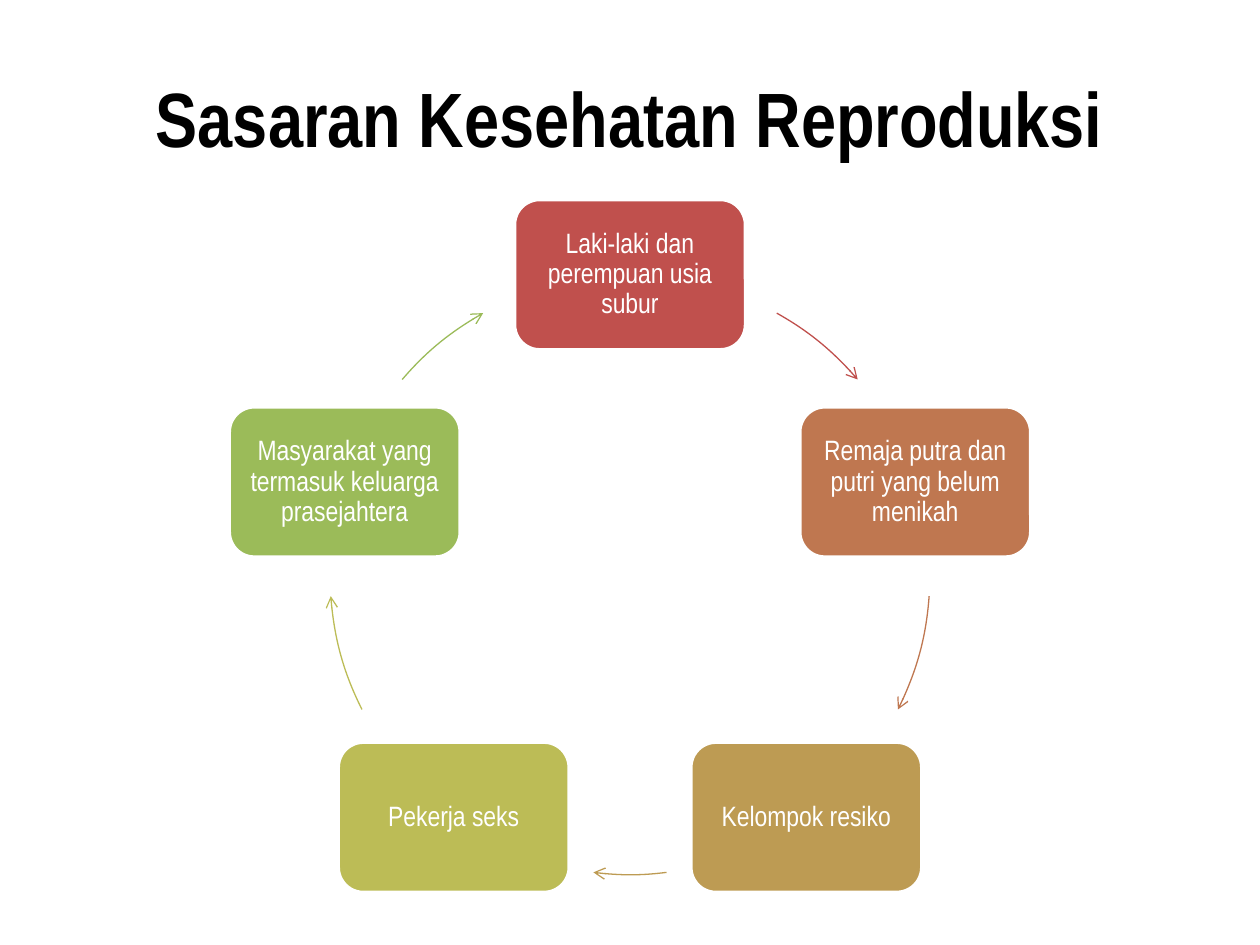
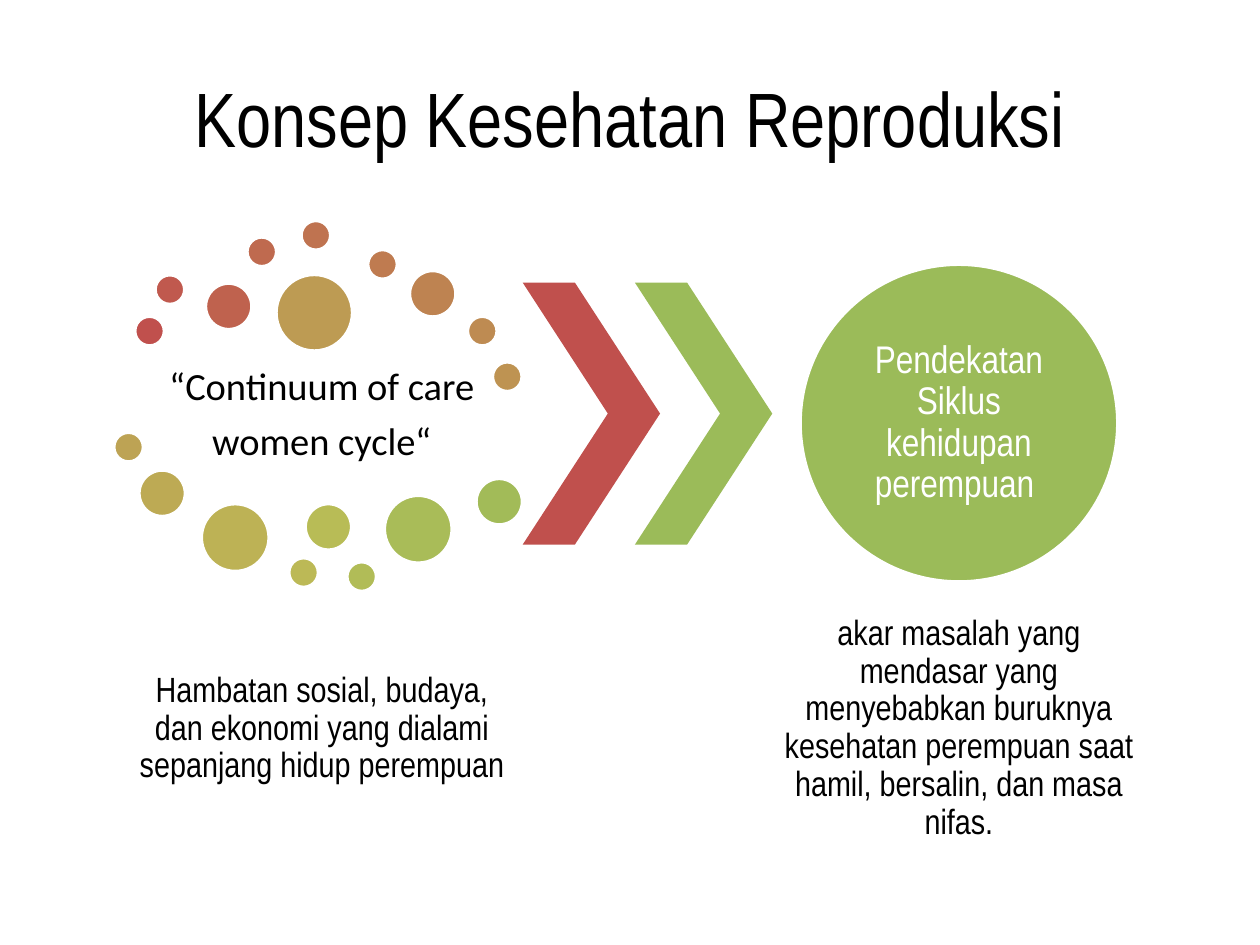
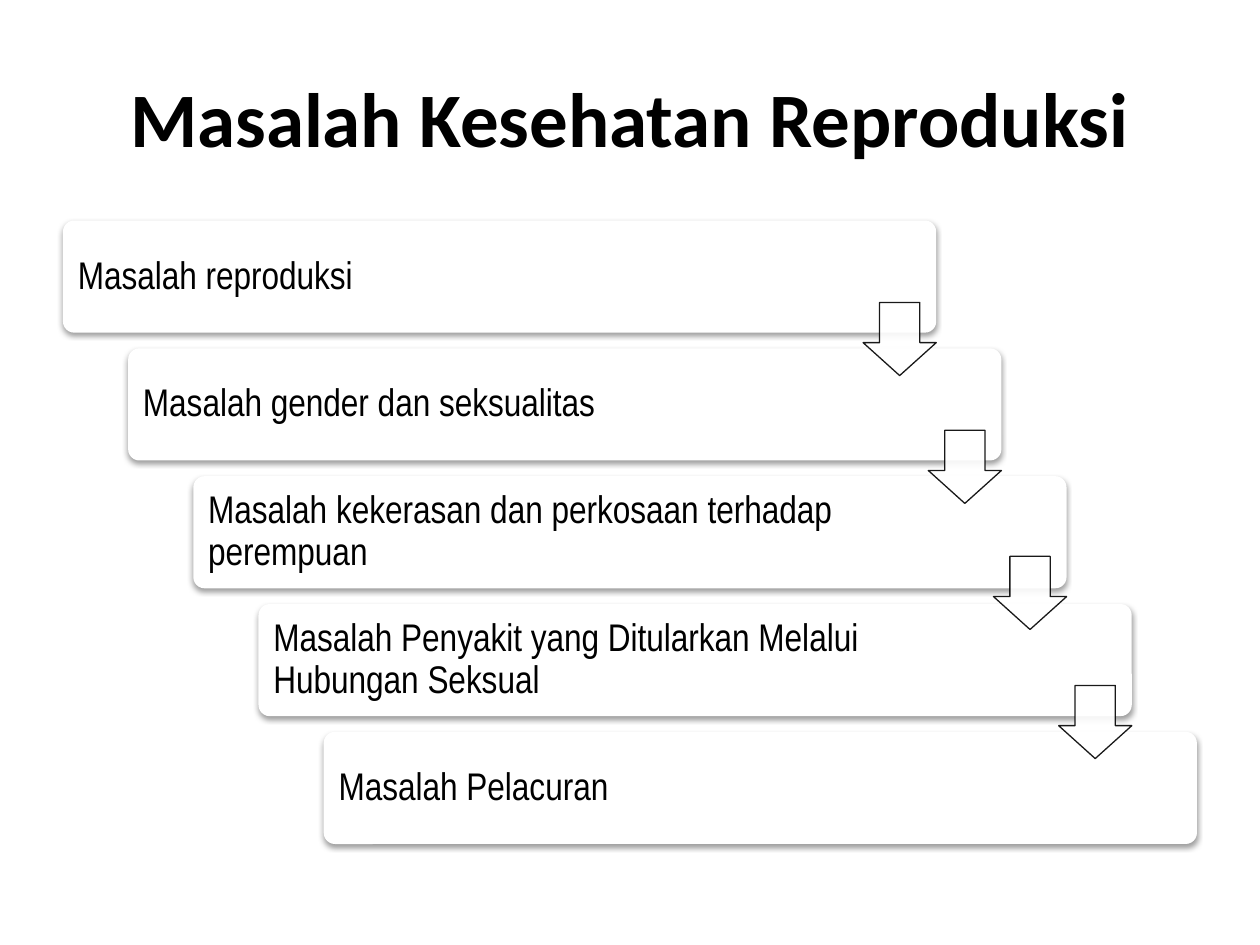
from colorsys import hls_to_rgb, rgb_to_hls
from math import cos, radians, sin, tan

from lxml.etree import SubElement
from pptx import Presentation
from pptx.dml.color import RGBColor
from pptx.enum.shapes import MSO_SHAPE as Shape
from pptx.enum.text import MSO_ANCHOR as Anchor, PP_ALIGN as Align
from pptx.oxml.ns import qn
from pptx.util import Pt

RED = RGBColor(0xC0, 0x50, 0x4D)
GREEN = RGBColor(0x9B, 0xBB, 0x59)
WHITE = RGBColor(0xFF, 0xFF, 0xFF)
BLACK = RGBColor(0x00, 0x00, 0x00)
NARROW = "Arial Narrow"
CALIBRI = "Calibri"

RING_LEFT, RING_TOP, RING_RADIUS = 188.6, 157, 171.4
TARGET_SIZE = (132, 85.9)
TARGETS = [
    "Laki-laki dan perempuan usia subur",
    "Remaja putra dan putri yang belum menikah",
    "Kelompok resiko",
    "Pekerja seks",
    "Masyarakat yang termasuk keluarga prasejahtera",
]
# Start and end angle of each arrow, clockwise from the right
ARROW_ANGLES = [(-60.7, -40.6), (4.1, 26.7), (83, 97), (153.3, 175.9), (220.6, 240.7)]

SMALL, MEDIUM, LARGE, LARGEST = 17, 26.6, 38.8, 43.8
# Left, top, diameter, in colour order
DOTS = [
    (77, 180.7, SMALL), (88.6, 157, SMALL), (117.4, 161.8, MEDIUM),
    (141.1, 135.4, SMALL), (172, 126, SMALL), (210.1, 142.6, SMALL),
    (234, 154.6, MEDIUM), (267.1, 180.7, SMALL), (281.4, 206.8, SMALL),
    (157.7, 156.8, LARGEST), (65, 247, SMALL), (79.4, 268.6, MEDIUM),
    (115, 287.8, LARGE), (165, 318.7, SMALL), (174.4, 287.8, MEDIUM),
    (198.2, 321, SMALL), (219.6, 283, LARGE), (272, 273.4, MEDIUM),
]

PROBLEMS = [
    "Masalah reproduksi",
    "Masalah gender dan seksualitas",
    "Masalah kekerasan dan perkosaan terhadap perempuan",
    "Masalah Penyakit yang Ditularkan Melalui Hubungan Seksual",
    "Masalah Pelacuran",
]
CARD_LEFT, CARD_TOP, CARD_WIDTH, CARD_HEIGHT = 36, 126, 499, 64.1
STEP_X, STEP_Y = 37.25, 73.05
ARROW_SIZE = 41.8
ARROW_DROPS = [46.8, 46.8, 45.8, 46.5]


def blend(share):
    """Colour between RED and GREEN, mixed along the hue."""
    start, end = (rgb_to_hls(*(part / 255 for part in color)) for color in (RED, GREEN))
    mixed = (a + (b - a) * share for a, b in zip(start, end))
    return RGBColor(*(round(part * 255) for part in hls_to_rgb(*mixed)))


def write(shape, lines, size, color=BLACK, font=NARROW, bold=False,
          align=Align.CENTER, spacing=0.9, insets=(0, 0, 0, 0)):
    """Fill a shape with paragraphs; insets are left, top, right, bottom."""
    frame = shape.text_frame
    frame.word_wrap = True
    frame.vertical_anchor = Anchor.MIDDLE
    frame.margin_left, frame.margin_top, frame.margin_right, frame.margin_bottom = map(Pt, insets)
    for index, line in enumerate(lines):
        paragraph = frame.add_paragraph() if index else frame.paragraphs[0]
        paragraph.alignment = align
        paragraph.line_spacing = spacing
        paragraph.space_after = Pt(size * 0.35)
        run = paragraph.add_run()
        run.text = line
        run.font.name = font
        run.font.size = Pt(size)
        run.font.bold = bold
        run.font.color.rgb = color


def add_text(slide, box, lines, size, **style):
    write(slide.shapes.add_textbox(*map(Pt, box)), lines, size, **style)


def add_title(slide, text, font=NARROW, bold=False):
    add_text(slide, (36, 21.6, 648, 90), [text], 44, font=font, bold=bold,
             spacing=1, insets=(7.2, 3.6, 7.2, 3.6))


def add_filled(slide, kind, box, fill, line=None, line_width=2, adjustments=()):
    shape = slide.shapes.add_shape(kind, *map(Pt, box))
    shape.shadow.inherit = False
    shape.fill.solid()
    shape.fill.fore_color.rgb = fill
    if line is None:
        shape.line.fill.background()
    else:
        shape.line.color.rgb = line
        shape.line.width = Pt(line_width)
    for index, value in enumerate(adjustments):
        shape.adjustments[index] = value
    return shape


def ring_point(angle, pull=0):
    """Point inside the ring's frame, moved along the tangent by pull radii."""
    turn = radians(angle)
    return (RING_RADIUS * (1 + cos(turn) - pull * sin(turn)),
            RING_RADIUS * (1 + sin(turn) + pull * cos(turn)))


def add_ring_arrow(slide, start, end, color):
    """Draw one Bezier arc in a frame as large as the whole ring."""
    pull = 4 / 3 * tan(radians(end - start) / 4)
    first, *curve = [ring_point(start), ring_point(start, pull),
                     ring_point(end, -pull), ring_point(end)]
    builder = slide.shapes.build_freeform(*map(Pt, first))
    builder.add_line_segments([tuple(map(Pt, curve[-1]))], close=False)
    arrow = builder.convert_to_shape()
    arrow.left, arrow.top = Pt(RING_LEFT), Pt(RING_TOP)
    arrow.width = arrow.height = Pt(2 * RING_RADIUS)

    outline = next(arrow._element.iter(qn("a:path")))
    for side in ("w", "h"):
        outline.set(side, str(arrow.width))
    for segment in list(outline):
        outline.remove(segment)
    for command, points in (("a:moveTo", [first]), ("a:cubicBezTo", curve)):
        segment = SubElement(outline, qn(command))
        for x, y in points:
            SubElement(segment, qn("a:pt"), x=str(Pt(x)), y=str(Pt(y)))

    arrow.shadow.inherit = False
    arrow.fill.background()
    arrow.line.color.rgb = color
    arrow.line.width = Pt(0.75)
    SubElement(arrow.line._get_or_add_ln(), qn("a:tailEnd"), type="arrow")


def add_soft_shadow(shape):
    effects = shape._element.spPr.find(qn("a:effectLst"))
    shadow = SubElement(effects, qn("a:outerShdw"), blurRad=str(Pt(3.1)), dist=str(Pt(1.6)),
                        dir="5400000", rotWithShape="0")
    color = SubElement(shadow, qn("a:srgbClr"), val=str(BLACK))
    SubElement(color, qn("a:alpha"), val="38000")


def set_opacity(shape, percent):
    for color in list(shape._element.spPr.iter(qn("a:srgbClr"))):
        SubElement(color, qn("a:alpha"), val=str(percent * 1000))


def build_targets(slide):
    add_title(slide, "Sasaran Kesehatan Reproduksi", bold=True)
    width, height = TARGET_SIZE
    for index, (text, angles) in enumerate(zip(TARGETS, ARROW_ANGLES)):
        color = blend(index / (len(TARGETS) - 1))
        x, y = ring_point(index * 360 / len(TARGETS) - 90)
        box = (RING_LEFT + x - width / 2, RING_TOP + y - height / 2, width, height)
        target = add_filled(slide, Shape.ROUNDED_RECTANGLE, box, color, WHITE)
        write(target, [text], 16, WHITE, insets=(5, 5, 5, 5))
        add_ring_arrow(slide, *angles, color)


def build_concept(slide):
    add_title(slide, "Konsep Kesehatan Reproduksi")
    insets = (2, 2, 2, 2)
    add_text(slide, (77, 202.3, 213.8, 70.6), ["“Continuum of care", "women cycle“"], 22,
             font=CALIBRI, insets=insets)
    add_text(slide, (77.1, 350.5, 213.8, 131.8),
             ["Hambatan sosial, budaya, dan ekonomi yang dialami sepanjang hidup perempuan"],
             20, insets=insets)
    for index, (left, top, diameter) in enumerate(DOTS):
        add_filled(slide, Shape.OVAL, (left, top, diameter, diameter),
                   blend(index / len(DOTS)), WHITE)
    for left, color in ((298.7, RED), (362.8, GREEN)):
        add_filled(slide, Shape.CHEVRON, (left, 161.5, 78.5, 149.7), color, adjustments=[0.62])
    approach = add_filled(slide, Shape.OVAL, (457.2, 151, 181.6, 181.6), GREEN, WHITE)
    write(approach, ["Pendekatan Siklus kehidupan perempuan "], 22, WHITE)
    add_text(slide, (441.1, 350.4, 213.8, 131.8),
             ["akar masalah yang mendasar yang menyebabkan buruknya kesehatan perempuan "
              "saat hamil, bersalin, dan masa nifas."], 20, insets=insets)


def build_problems(slide):
    add_title(slide, "Masalah Kesehatan Reproduksi", CALIBRI, bold=True)
    corners = [(CARD_LEFT + STEP_X * index, CARD_TOP + STEP_Y * index)
               for index in range(len(PROBLEMS))]
    for (left, top), text in zip(corners, PROBLEMS):
        card = add_filled(slide, Shape.ROUNDED_RECTANGLE, (left, top, CARD_WIDTH, CARD_HEIGHT),
                          WHITE, adjustments=[0.1])
        add_soft_shadow(card)
        write(card, [text], 22, align=Align.LEFT, insets=(6.6, 6.6, 82, 6.6))
    for (left, top), drop in zip(corners, ARROW_DROPS):
        box = (left + CARD_WIDTH - ARROW_SIZE, top + drop, ARROW_SIZE, ARROW_SIZE)
        arrow = add_filled(slide, Shape.DOWN_ARROW, box, WHITE, BLACK, 0.75, [0.55, 0.45])
        set_opacity(arrow, 90)


def main():
    presentation = Presentation()
    presentation.slide_width, presentation.slide_height = Pt(720), Pt(540)
    for build in (build_targets, build_concept, build_problems):
        build(presentation.slides.add_slide(presentation.slide_layouts[6]))
    presentation.save("out.pptx")


if __name__ == "__main__":
    main()
